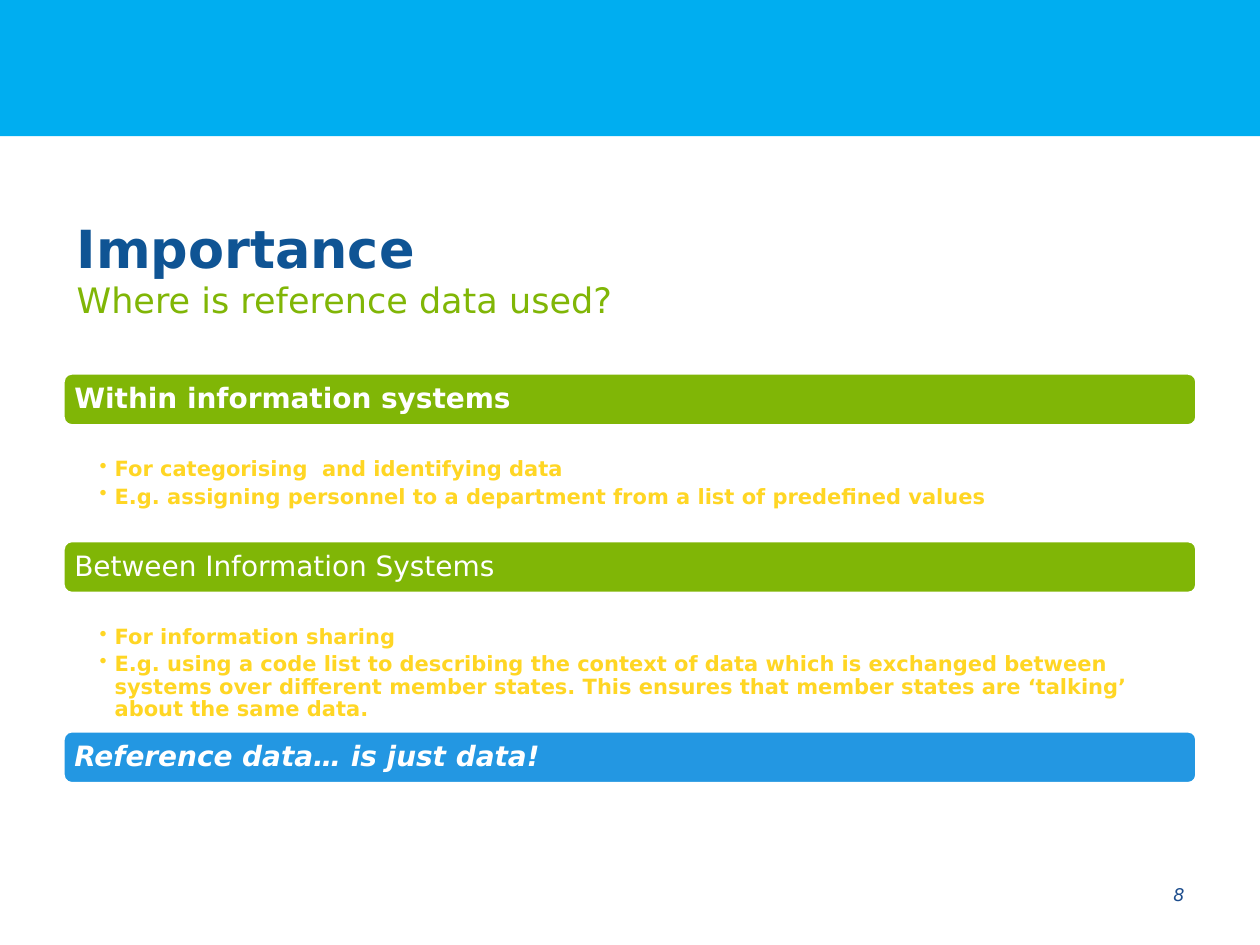
from dataclasses import dataclass

from lxml.etree import SubElement
from pptx import Presentation
from pptx.dml.color import RGBColor as Rgb
from pptx.enum.shapes import MSO_SHAPE as Shape
from pptx.enum.text import MSO_ANCHOR as Anchor, PP_ALIGN as Align
from pptx.oxml.ns import qn
from pptx.util import Inches, Pt


@dataclass(frozen=True)
class Theme:
    font: str = "DejaVu Sans"
    banner: str = "00AEF0"
    title: str = "0F5494"
    green: str = "80B606"
    blue: str = "2397E2"
    yellow: str = "FFD624"
    white: str = "FFFFFF"
    number: str = "1D4D8D"
    title_size: int = 30
    subtitle_size: int = 20
    heading_size: int = 16
    bullet_size: int = 12
    number_size: int = 10


THEME = Theme()
LEFT, WIDTH = 0.5, 9
BAR_HEIGHT = 0.42
SECTIONS_TOP = 2.96

# Heading, bar colour, font style, bullets, height of the bullet area
SECTIONS = [
    ("Within information systems", THEME.green, {"bold": True}, [
        "For categorising  and identifying data",
        "E.g. assigning personnel to a department from a list of predefined values",
    ], 0.91),
    ("Between Information Systems", THEME.green, {}, [
        "For information sharing",
        "E.g. using a code list to describing the context of data which is exchanged "
        "between systems over different member states. This ensures that member states "
        "are ‘talking’ about the same data.",
    ], 1.09),
    ("Reference data… is just data!", THEME.blue, {"bold": True, "italic": True}, [], 0),
]


def set_attributes(target, values):
    for name, value in values.items():
        setattr(target, name, value)


def add_span(para, text, size, color, **style):
    span = para.add_run()
    span.text = text
    set_attributes(span.font, {"name": THEME.font, "size": Pt(size), **style})
    span.font.color.rgb = Rgb.from_string(color)


def set_frame(frame, anchor, **margins):
    """Wrap the text and set its anchor and its margins in inches."""
    set_attributes(frame, {"word_wrap": True, "vertical_anchor": anchor})
    set_attributes(frame, {f"margin_{side}": Inches(gap) for side, gap in margins.items()})
    return frame


def add_text_box(page, box, anchor, **margins):
    text_box = page.shapes.add_textbox(*map(Inches, box))
    return set_frame(text_box.text_frame, anchor, **margins)


def add_panel(page, kind, box, color):
    panel = page.shapes.add_shape(kind, *map(Inches, box))
    panel.shadow.inherit = False
    panel.fill.solid()
    panel.fill.fore_color.rgb = Rgb.from_string(color)
    panel.line.fill.background()
    return panel


def add_title(page, box):
    para = add_text_box(page, box, Anchor.MIDDLE).paragraphs[0]
    add_span(para, "Importance", THEME.title_size, THEME.title, bold=True)
    para.add_line_break()
    add_span(para, "Where is reference data used?", THEME.subtitle_size, THEME.green)


def add_heading_bar(page, box, text, color, style):
    bar = add_panel(page, Shape.ROUNDED_RECTANGLE, box, color)
    bar.line.color.rgb = Rgb.from_string(THEME.white)
    bar.line.width = Pt(2)
    frame = set_frame(bar.text_frame, Anchor.MIDDLE, left=0.07, top=0.07, right=0.07, bottom=0.07)
    para = frame.paragraphs[0]
    set_attributes(para, {"alignment": Align.LEFT, "line_spacing": 0.9})
    add_span(para, text, THEME.heading_size, THEME.white, **style)


def add_bullets(page, box, bullets):
    frame = add_text_box(page, box, Anchor.TOP, left=0.29, top=0.26, right=0.12, bottom=0.02)
    for index, text in enumerate(bullets):
        para = frame.add_paragraph() if index else frame.paragraphs[0]
        set_attributes(para, {"line_spacing": 0.9, "space_after": Pt(2.6)})
        properties = para._p.get_or_add_pPr()
        properties.set("marL", str(Inches(0.12)))
        properties.set("indent", str(Inches(-0.12)))
        SubElement(properties, qn("a:buChar")).set("char", "•")
        add_span(para, text, THEME.bullet_size, THEME.yellow, bold=True)


def add_sections(page, left, top, width):
    """Stack each heading bar and its bullets from the top down."""
    for heading, color, style, bullets, height in SECTIONS:
        add_heading_bar(page, (left, top, width, BAR_HEIGHT), heading, color, style)
        top += BAR_HEIGHT
        if bullets:
            add_bullets(page, (left, top, width, height), bullets)
        top += height


def add_page_number(page, box):
    para = add_text_box(page, box, Anchor.BOTTOM).paragraphs[0]
    para.alignment = Align.RIGHT
    add_span(para, "8", THEME.number_size, THEME.number, italic=True)


def main():
    deck = Presentation()
    set_attributes(deck, {"slide_width": Inches(10), "slide_height": Inches(7.5)})
    page = deck.slides.add_slide(deck.slide_layouts[6])
    add_panel(page, Shape.RECTANGLE, (0, 0, 10, 1.08), THEME.banner)
    add_title(page, (0.51, 1.62, WIDTH, 1.02))
    add_sections(page, LEFT, SECTIONS_TOP, WIDTH)
    add_page_number(page, (7.17, 6.71, 2.33, 0.52))
    deck.save("out.pptx")


if __name__ == "__main__":
    main()
